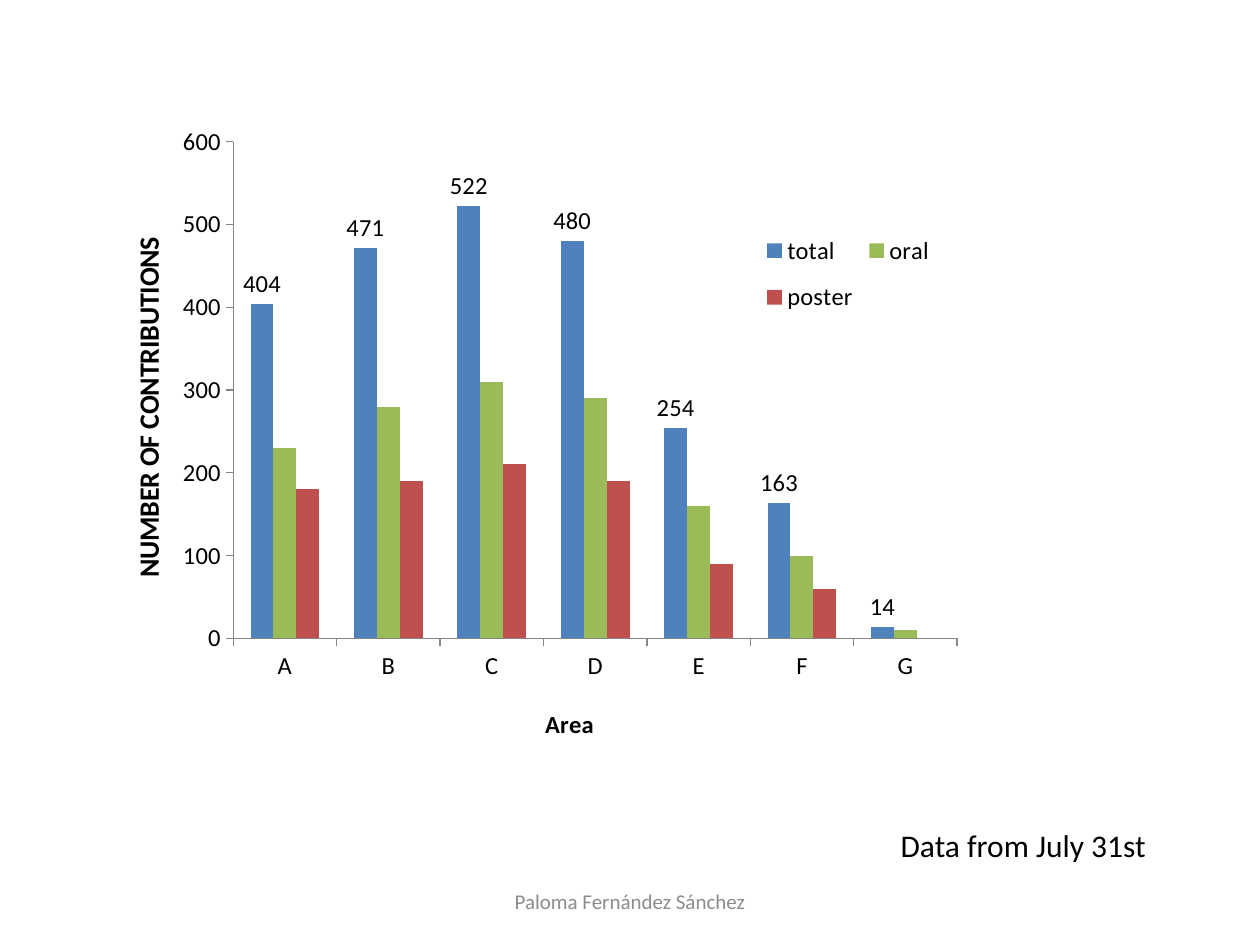
from dataclasses import dataclass

from lxml.etree import SubElement
from pptx import Presentation
from pptx.chart.data import CategoryChartData
from pptx.dml.color import RGBColor
from pptx.enum.chart import XL_CHART_TYPE, XL_LABEL_POSITION, XL_LEGEND_POSITION, XL_TICK_MARK
from pptx.enum.text import MSO_ANCHOR, MSO_AUTO_SIZE, PP_ALIGN
from pptx.oxml.ns import qn
from pptx.util import Pt


@dataclass(frozen=True)
class Theme:
    """Colours and type sizes of the slide."""
    font: str = "Calibri"
    ink: RGBColor = RGBColor(0x00, 0x00, 0x00)
    muted: RGBColor = RGBColor(0x8C, 0x8C, 0x8C)
    axis: RGBColor = RGBColor(0x86, 0x86, 0x86)
    total: RGBColor = RGBColor(0x4F, 0x81, 0xBD)
    oral: RGBColor = RGBColor(0x9B, 0xBB, 0x59)
    poster: RGBColor = RGBColor(0xC0, 0x50, 0x4D)
    base: int = 10
    footer: int = 12
    label: int = 14
    axis_title: int = 16
    note: int = 18


THEME = Theme()
AREAS = "ABCDEFG"
CONTRIBUTIONS = {
    "total": (404, 471, 522, 480, 254, 163, 14),
    "oral": (230, 280, 310, 290, 160, 100, 10),
    "poster": (180, 190, 210, 190, 90, 60, 0),
}


def style_font(font, size, color=THEME.ink, bold=False):
    """Apply the theme font with a size, colour and weight."""
    font.name, font.size, font.bold = THEME.font, Pt(size), bold
    font.color.rgb = color


def place(part, index, inner=False, **fractions):
    """Place a chart part by fractions of the chart's size."""
    for previous in part.findall(qn("c:layout")):
        part.remove(previous)
    layout = SubElement(part, qn("c:layout"))
    part.insert(index, layout)
    manual = SubElement(layout, qn("c:manualLayout"))
    if inner:
        SubElement(manual, qn("c:layoutTarget")).set("val", "inner")
    for side in "xy":
        SubElement(manual, qn(f"c:{side}Mode")).set("val", "edge")
    for side, fraction in fractions.items():
        SubElement(manual, qn(f"c:{side}")).set("val", str(fraction))


def style_axis(axis, title, title_size, x, y):
    """Style an axis and place its bold title."""
    axis.has_major_gridlines = False
    axis.major_tick_mark = XL_TICK_MARK.OUTSIDE
    axis.minor_tick_mark = XL_TICK_MARK.NONE
    axis.format.line.color.rgb = THEME.axis
    axis.format.line.width = Pt(0.75)
    style_font(axis.tick_labels.font, THEME.label)
    heading = axis.axis_title.text_frame.paragraphs[0]
    heading.text = title
    style_font(heading.font, title_size, bold=True)
    place(axis.axis_title._element, 1, x=x, y=y)


def add_contributions_chart(slide, left, top, width, height):
    """Draw the clustered columns of contributions by area."""
    data = CategoryChartData()
    data.categories = AREAS
    for kind, counts in CONTRIBUTIONS.items():
        data.add_series(kind, counts)
    chart = slide.shapes.add_chart(
        XL_CHART_TYPE.COLUMN_CLUSTERED, Pt(left), Pt(top), Pt(width), Pt(height), data
    ).chart
    style_font(chart.font, THEME.base)
    chart.has_title = False
    style_axis(chart.category_axis, "Area", THEME.label, 0.45, 0.91)
    style_axis(chart.value_axis, "NUMBER OF CONTRIBUTIONS", THEME.axis_title, 0.03, 0.18)
    chart.value_axis.minimum_scale = 0
    chart.value_axis.maximum_scale = 600
    chart.value_axis.major_unit = 100

    columns = chart.plots[0]
    columns.gap_width, columns.overlap = 150, 0
    columns.vary_by_categories = False
    for series in columns.series:
        series.format.fill.solid()
        series.format.fill.fore_color.rgb = getattr(THEME, series.name)
    totals = columns.series[0].data_labels
    totals.show_value = True
    totals.position = XL_LABEL_POSITION.OUTSIDE_END
    style_font(totals.font, THEME.label)

    chart.has_legend = True
    chart.legend.position = XL_LEGEND_POSITION.RIGHT
    chart.legend.include_in_layout = False
    style_font(chart.legend.font, THEME.label)
    place(chart.legend._element, 1, x=0.67, y=0.16, w=0.18, h=0.17)
    plot_area = chart._chartSpace.chart.plotArea
    place(plot_area, 0, inner=True, x=0.14, y=0.04, w=0.73, h=0.77)


def add_note(slide, left, top, width, height):
    """Write the date of the data."""
    frame = slide.shapes.add_textbox(Pt(left), Pt(top), Pt(width), Pt(height)).text_frame
    frame.word_wrap = False
    frame.auto_size = MSO_AUTO_SIZE.SHAPE_TO_FIT_TEXT
    date = frame.paragraphs[0]
    date.text = "Data from July 31st"
    style_font(date.font, THEME.note)


def add_footer(slide, left, top, width, height):
    """Write the centred author line."""
    frame = slide.shapes.add_textbox(Pt(left), Pt(top), Pt(width), Pt(height)).text_frame
    frame.word_wrap = True
    frame.vertical_anchor = MSO_ANCHOR.MIDDLE
    author = frame.paragraphs[0]
    author.text = "Paloma Fernández Sánchez"
    author.alignment = PP_ALIGN.CENTER
    style_font(author.font, THEME.footer, THEME.muted)


def main():
    """Build and save the slide."""
    deck = Presentation()
    deck.slide_width, deck.slide_height = Pt(720), Pt(540)
    slide = deck.slides.add_slide(deck.slide_layouts[6])
    add_contributions_chart(slide, 54, 66.24, 566.64, 368.64)
    add_footer(slide, 246, 500.5, 228, 28.75)
    add_note(slide, 507.6, 468.72, 156.24, 29)
    deck.save("out.pptx")


if __name__ == "__main__":
    main()
